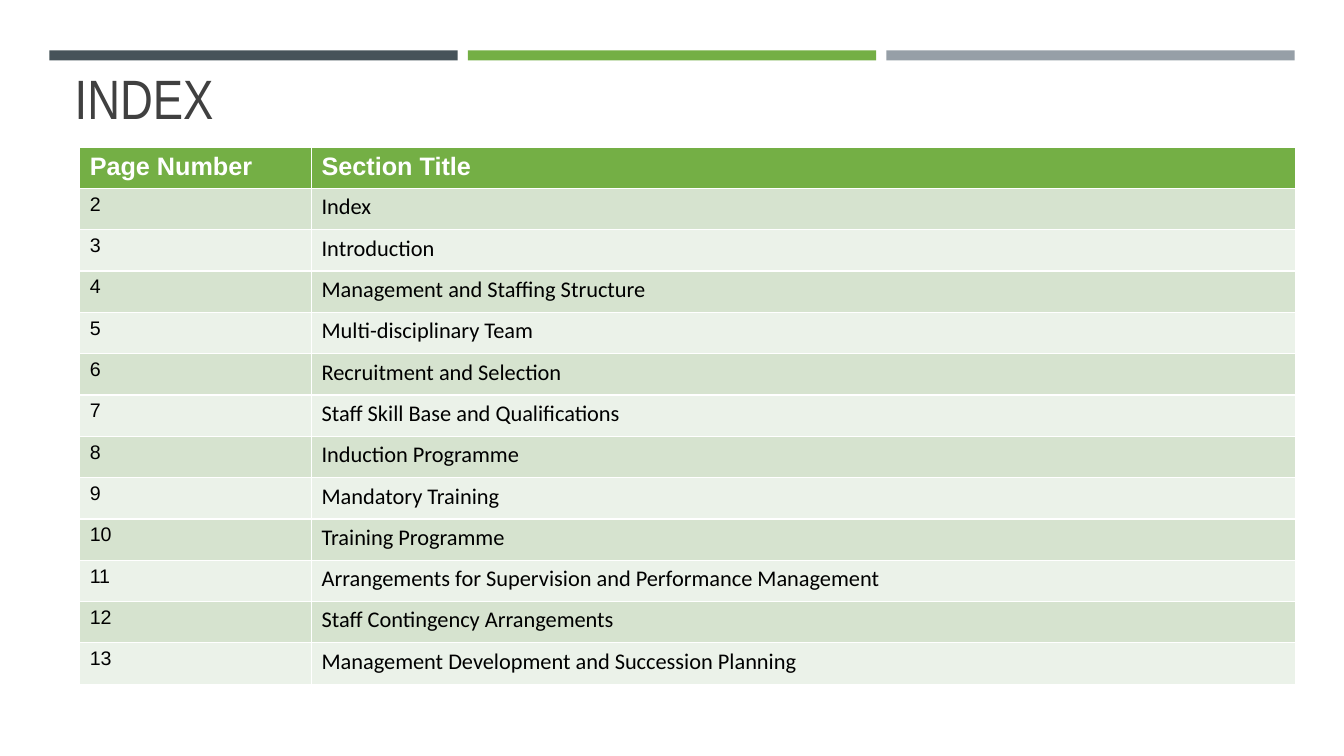
from pptx import Presentation
from pptx.dml.color import RGBColor
from pptx.enum.shapes import MSO_SHAPE
from pptx.enum.text import MSO_ANCHOR, MSO_AUTO_SIZE, PP_ALIGN
from pptx.util import Inches, Pt

RECT = MSO_SHAPE.RECTANGLE
BOTTOM = MSO_ANCHOR.BOTTOM
NO_FIT = MSO_AUTO_SIZE.NONE
LEFT = PP_ALIGN.LEFT

SLATE = RGBColor(0x46, 0x53, 0x59)
GREEN = RGBColor(0x74, 0xAF, 0x45)
GREY = RGBColor(0x96, 0x9F, 0xA7)
DARK = RGBColor(0x40, 0x40, 0x40)
BLACK = RGBColor(0, 0, 0)
WHITE = RGBColor(0xFF, 0xFF, 0xFF)
BAND = RGBColor(0xD6, 0xE3, 0xCF)
PALE = RGBColor(0xEB, 0xF2, 0xE9)

TITLES = [
    "Index",
    "Introduction",
    "Management and Staffing Structure",
    "Multi-disciplinary Team",
    "Recruitment and Selection",
    "Staff Skill Base and Qualifications",
    "Induction Programme",
    "Mandatory Training",
    "Training Programme",
    "Arrangements for Supervision and Performance Management",
    "Staff Contingency Arrangements",
    "Management Development and Succession Planning",
]


def write(frame, text, size, font="Arial", color=BLACK, bold=False, space=1.0):
    para = frame.paragraphs[0]
    para.alignment = LEFT
    para.line_spacing = space
    run = para.add_run()
    run.text = text
    run.font.size = Pt(size)
    run.font.name = font
    run.font.color.rgb = color
    run.font.bold = bold


prs = Presentation()
prs.slide_width = Inches(13.33)
prs.slide_height = Inches(7.5)
slide = prs.slides.add_slide(prs.slide_layouts[5])

# Three bars across the top
for i, color in enumerate([SLATE, GREEN, GREY]):
    bar = slide.shapes.add_shape(
        RECT, Inches(0.49 + 4.15 * i), Inches(0.5), Inches(4.05), Inches(0.1))
    bar.shadow.inherit = False
    bar.fill.solid()
    bar.fill.fore_color.rgb = color
    bar.line.fill.background()

# Title
title = slide.shapes.title
title.left, title.top = Inches(0.64), Inches(0.77)
title.width, title.height = Inches(12.06), Inches(0.58)
frame = title.text_frame
frame.auto_size = NO_FIT
frame.vertical_anchor = BOTTOM
write(frame, "INDEX", 39.6, font="Arial Narrow", color=DARK, space=0.9)

# Index table: pages count up from 2
count = len(TITLES) + 1
table = slide.shapes.add_table(
    count, 2, Inches(0.79), Inches(1.46), Inches(12.06), Inches(5.33)).table
table.columns[0].width = Inches(2.3)
table.columns[1].width = Inches(9.76)
for row in table.rows:
    row.height = Inches(0.41)

for col, text in enumerate(["Page Number", "Section Title"]):
    cell = table.cell(0, col)
    cell.fill.solid()
    cell.fill.fore_color.rgb = GREEN
    write(cell.text_frame, text, 18, color=WHITE, bold=True)

for i, text in enumerate(TITLES, start=1):
    page, name = table.cell(i, 0), table.cell(i, 1)
    for cell in (page, name):
        cell.fill.solid()
        cell.fill.fore_color.rgb = BAND if i % 2 else PALE
    write(page.text_frame, str(i + 1), 14)
    write(name.text_frame, text, 16, font="Calibri")

prs.save("out.pptx")
